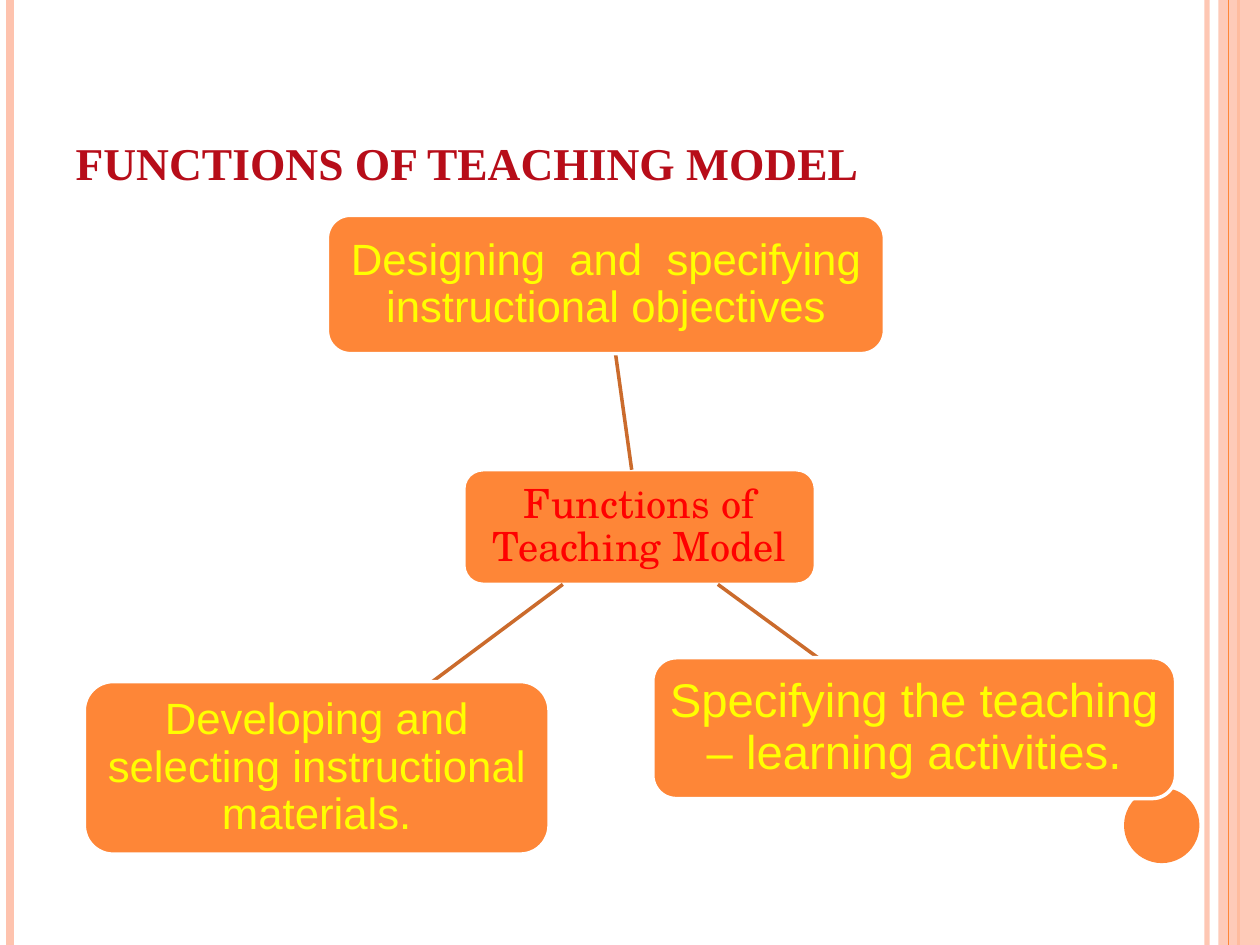
from dataclasses import dataclass
from lxml.etree import SubElement
from pptx import Presentation
from pptx.dml.color import RGBColor
from pptx.enum.shapes import MSO_CONNECTOR, MSO_SHAPE
from pptx.enum.text import MSO_ANCHOR, MSO_AUTO_SIZE, PP_ALIGN
from pptx.oxml.ns import qn
from pptx.util import Cm, Pt


@dataclass(frozen=True)
class Theme:
    accent: str = "FE8637"
    pale: str = "FEC3AE"
    spoke: str = "CB6B2C"
    white: str = "FFFFFF"
    title: str = "B70D19"
    hub_text: str = "FF0000"
    box_text: str = "FFFF00"
    title_font: str = "Times New Roman"
    hub_font: str = "TeX Gyre Schola"
    box_font: str = "Arial"
    title_size: int = 26
    hub_size: int = 23
    box_size: int = 25
    large_size: int = 27
    outline: int = 2


THEME = Theme()
PAGE_WIDTH, PAGE_HEIGHT = 25.4, 19.05
TITLE = "FUNCTIONS OF TEACHING MODEL"
HUB = ("Functions of Teaching Model", (9.35, 9.47, 7.09, 2.31))
FUNCTIONS = [
    ("Designing  and  specifying instructional objectives", (6.6, 4.34, 11.23, 2.79), THEME.box_size),
    ("Specifying the teaching – learning activities.", (13.16, 13.26, 10.54, 2.84), THEME.large_size),
    ("Developing and selecting instructional materials.", (1.7, 13.74, 9.37, 3.48), THEME.box_size),
]
STRIPES_BEHIND = [
    (24.33, THEME.pale, 3, 93),
    (0.2, THEME.pale, 4.5, 100),
    (24.97, THEME.accent, 1.5, 100),
]
STRIPE_FRONT = (24.77, THEME.accent, 0.75, 100)
BAND = (24.56, 0, 0.84, PAGE_HEIGHT)
DISC = (22.66, 15.88, 1.52, 1.52)


def paint(fill, color, opacity=100):
    fill.solid()
    fill.fore_color.rgb = RGBColor.from_string(color)
    if opacity < 100:
        tint = fill._xPr.find(qn("a:solidFill"))[0]
        SubElement(tint, qn("a:alpha"), val=str(opacity * 1000))


def add_line(page, start, end, color, width, opacity=100):
    line = page.shapes.add_connector(MSO_CONNECTOR.STRAIGHT, *map(Cm, (*start, *end)))
    line.line.width = Pt(width)
    paint(line.line.fill, color, opacity)
    SubElement(line._element.spPr, qn("a:effectLst"))


def add_stripe(page, x, color, width, opacity):
    add_line(page, (x, 0), (x, PAGE_HEIGHT), color, width, opacity)


def add_box(page, preset, frame, fill, opacity=100, outline=None):
    box = page.shapes.add_shape(preset, *map(Cm, frame))
    box.shadow.inherit = False
    paint(box.fill, fill, opacity)
    if outline:
        paint(box.line.fill, outline)
        box.line.width = Pt(THEME.outline)
    else:
        box.line.fill.background()
    return box


def write(box, text, *, font, size, color, bold=False, align=PP_ALIGN.CENTER,
          anchor=MSO_ANCHOR.MIDDLE, spacing=None, inset=None):
    frame = box.text_frame
    frame.word_wrap = True
    frame.auto_size = MSO_AUTO_SIZE.NONE
    frame.vertical_anchor = anchor
    if inset is not None:
        frame.margin_left = frame.margin_right = Cm(inset)
        frame.margin_top = frame.margin_bottom = Cm(inset)
    para = frame.paragraphs[0]
    para.alignment = align
    para.line_spacing = spacing
    span = para.add_run()
    span.text = text
    span.font.name = font
    span.font.size = Pt(size)
    span.font.bold = bold
    span.font.color.rgb = RGBColor.from_string(color)


def center(frame):
    left, top, width, height = frame
    return left + width / 2, top + height / 2


def edge_point(frame, target):
    x, y = center(frame)
    target_x, target_y = center(target)
    share = frame[3] / 2 / abs(target_y - y)
    return x + (target_x - x) * share, y + (target_y - y) * share


def add_node(page, text, frame, **style):
    box = add_box(page, MSO_SHAPE.ROUNDED_RECTANGLE, frame, THEME.accent, outline=THEME.white)
    write(box, text, spacing=0.9, **style)


def main():
    """Build the slide on the functions of a teaching model."""
    deck = Presentation()
    deck.slide_width, deck.slide_height = Cm(PAGE_WIDTH), Cm(PAGE_HEIGHT)
    page = deck.slides.add_slide(deck.slide_layouts[5])

    for stripe in STRIPES_BEHIND:
        add_stripe(page, *stripe)
    add_box(page, MSO_SHAPE.RECTANGLE, BAND, THEME.pale, opacity=87)
    add_stripe(page, *STRIPE_FRONT)
    add_box(page, MSO_SHAPE.OVAL, DISC, THEME.accent)

    title = page.shapes.title
    title.left, title.top, title.width, title.height = map(Cm, (1.27, 0.76, 20.75, 3.18))
    write(title, TITLE, font=THEME.title_font, size=THEME.title_size, color=THEME.title,
          bold=True, align=PP_ALIGN.LEFT, anchor=MSO_ANCHOR.BOTTOM)

    hub_text, hub_frame = HUB
    add_node(page, hub_text, hub_frame, font=THEME.hub_font, size=THEME.hub_size,
             color=THEME.hub_text, inset=0.15)
    for text, frame, size in FUNCTIONS:
        add_line(page, edge_point(hub_frame, frame), edge_point(frame, hub_frame),
                 THEME.spoke, THEME.outline)
        add_node(page, text, frame, font=THEME.box_font, size=size,
                 color=THEME.box_text, inset=0.17)

    deck.save("out.pptx")


if __name__ == "__main__":
    main()
